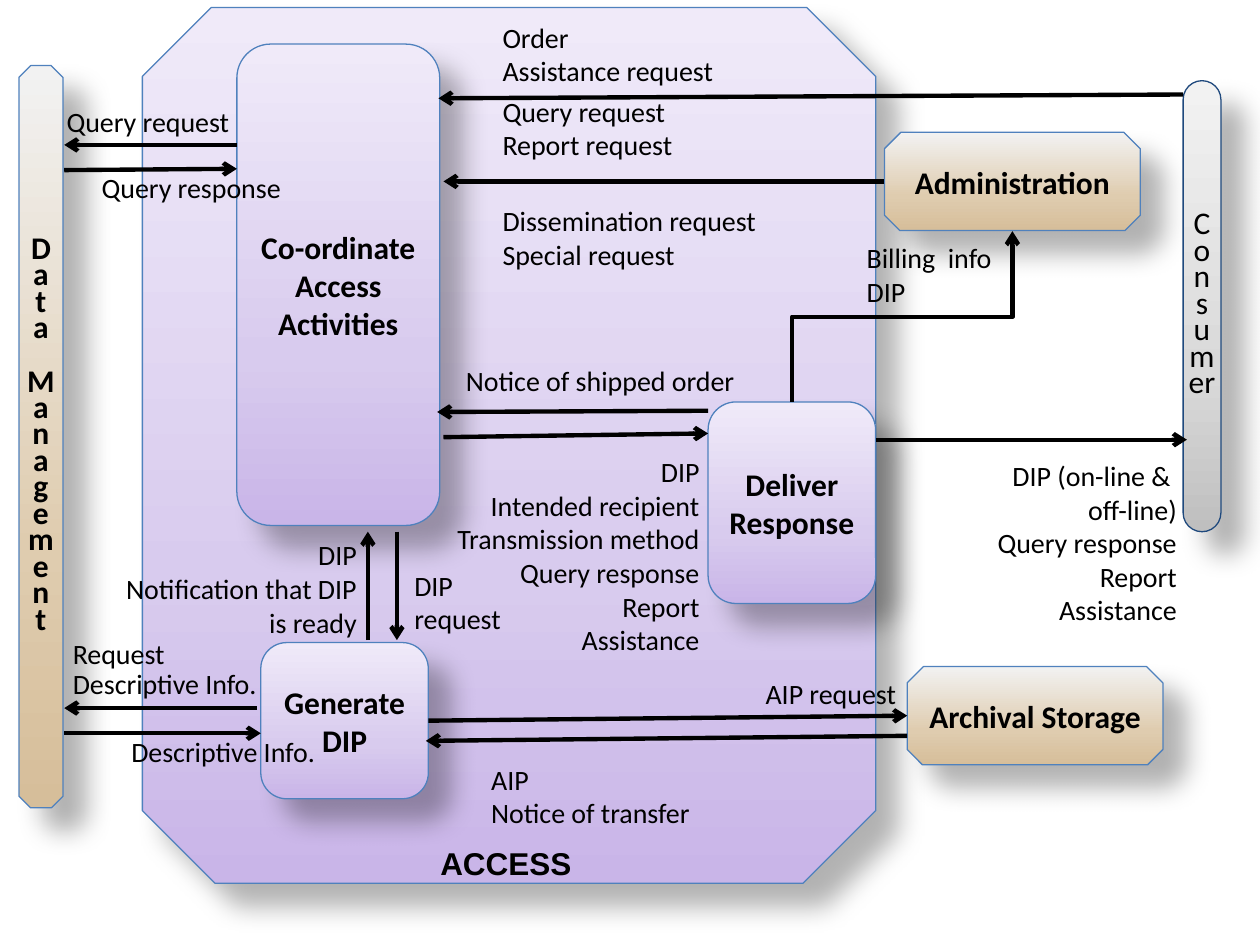
from lxml.etree import SubElement
from pptx import Presentation
from pptx.dml.color import RGBColor
from pptx.enum.shapes import MSO_CONNECTOR as Link, MSO_SHAPE as Shape
from pptx.enum.text import MSO_ANCHOR as Anchor, MSO_AUTO_SIZE as AutoSize, PP_ALIGN as Align
from pptx.oxml import parse_xml
from pptx.oxml.ns import nsdecls, qn
from pptx.util import Inches, Pt

BLACK, BLUE, NAVY = "000000", "4F81BD", "1F497D"
PURPLE = ("C9B5E8", "D8CBEE", "F0EAF9")
TAN = ("D6BE9A", "DFCCAF", "F2F2F2")
GREY = ("BFBFBF", "D9D9D9", "F2F2F2")
SNIP, ROUND = Shape.SNIP_2_SAME_RECTANGLE, Shape.ROUNDED_RECTANGLE
MARGINS = (0.1, 0.05, 0.1, 0.05)
FLUSH = (0, 0, 0, 0)
LOW, HIGH = (0.1, 0.05, 0.1, 0), (0.1, 0, 0.1, 0.05)

# name: (preset, adjustments, place, colours, lines of text)
ENTITIES = {
    "access": (SNIP, (0.094, 0.099), (1.13, 0.06, 5.82, 6.95), PURPLE, []),
    "coordinate": (ROUND, (), (1.88, 0.35, 1.61, 3.82), PURPLE, ["Co-ordinate Access Activities"]),
    "generate": (ROUND, (), (2.07, 5.1, 1.33, 1.24), PURPLE, ["Generate", "DIP"]),
    "deliver": (ROUND, (), (5.62, 3.19, 1.33, 1.6), PURPLE, ["Deliver Response"]),
    "administration": (SNIP, (0.167, 0.156), (7.02, 1.05, 2.03, 0.78), TAN, ["Administration"]),
    "storage": (SNIP, (0.167, 0.156), (7.2, 5.29, 2.03, 0.78), TAN, ["Archival Storage"]),
    "data": (SNIP, (0.271, 0.26), (0.15, 0.52, 0.35, 5.89), TAN, list("DataManagement")),
    "consumer": (ROUND, (0.5,), (9.39, 0.64, 0.3, 3.58), GREY, ["Consumer"]),
}

FLOWS = [
    (2.92, 5.08, 2.92, 4.22), (3.15, 4.22, 3.15, 5.08),
    (1.88, 1.15, 0.51, 1.15), (0.51, 1.35, 1.88, 1.34),
    (9.39, 0.75, 3.48, 0.78), (7.02, 1.44, 3.52, 1.44),
    (2.04, 5.62, 0.51, 5.62), (0.51, 5.82, 2.07, 5.82),
    (7.2, 5.84, 3.38, 5.88), (6.95, 3.49, 9.42, 3.49),
    (5.62, 3.26, 3.47, 3.27), (3.52, 3.47, 5.62, 3.44),
]
AIP_REQUEST = (3.4, 5.72, 7.2, 5.68)
BILLING = (6.48, 1.64, 7.84, 3.39)

# (place, alignment, margins, line spacing, lines of text)
LABELS = [
    ((3.89, 0.16, 2.26, 1.18), Align.LEFT, HIGH, 1,
     ["Order", "Assistance request", "Query request", "Report request"]),
    ((5.87, 5.32, 1.34, 0.32), Align.RIGHT, LOW, 1, ["AIP request"]),
    ((3.8, 6, 2.25, 0.59), Align.LEFT, LOW, 1, ["AIP", "Notice of transfer"]),
    ((0.48, 5.03, 2.07, 0.59), Align.LEFT, MARGINS, 0.9, ["Request", "Descriptive Info."]),
    ((0.87, 5.78, 1.73, 0.37), Align.RIGHT, MARGINS, 1, ["Descriptive Info."]),
    ((0.43, 0.78, 1.61, 0.37), Align.LEFT, MARGINS, 1, ["Query request"]),
    ((0.46, 1.35, 1.77, 0.27), Align.RIGHT, FLUSH, 1, ["Query response"]),
    ((0.75, 4.22, 2.18, 0.91), Align.RIGHT, MARGINS, 1, ["DIP", "Notification that DIP is ready"]),
    ((3.19, 4.46, 1.94, 0.64), Align.LEFT, MARGINS, 1, ["DIP", "request"]),
    ((3.89, 1.57, 2.63, 0.64), Align.LEFT, MARGINS, 1, ["Dissemination request", "Special request"]),
    ((6.78, 1.86, 2.95, 0.64), Align.LEFT, MARGINS, 1, ["Billing  info", "DIP"]),
    ((7.45, 3.64, 1.89, 1.35), Align.RIGHT, FLUSH, 1,
     ["DIP (on-line & ", "off-line)", "Query response", "Report", "Assistance"]),
    ((3.4, 3.56, 2.25, 1.72), Align.RIGHT, MARGINS, 1,
     ["DIP", "Intended recipient", "Transmission method", "Query response", "Report", "Assistance"]),
    ((3.6, 2.84, 2.46, 0.37), Align.LEFT, MARGINS, 1, ["Notice of shipped order"]),
]


def rgb(value):
    return RGBColor.from_string(value)


def inches(lengths):
    return [Inches(length) for length in lengths]


def write(frame, lines, align, size, bold=False, font="Calibri", margins=MARGINS, spacing=1, anchor=Anchor.TOP):
    frame.word_wrap, frame.auto_size, frame.vertical_anchor = True, AutoSize.NONE, anchor
    frame.margin_left, frame.margin_top, frame.margin_right, frame.margin_bottom = inches(margins)
    frame.text = "\n".join(lines)
    for paragraph in frame.paragraphs:
        paragraph.alignment, paragraph.line_spacing = align, spacing
        paragraph.font.name, paragraph.font.size = font, Pt(size)
        paragraph.font.bold, paragraph.font.color.rgb = bold, rgb(BLACK)


def add_entity(slide, preset, adjustments, place, colours, lines):
    entity = slide.shapes.add_shape(preset, *inches(place))
    for index, value in enumerate(adjustments):
        entity.adjustments[index] = value
    vertical, is_consumer = len(lines) > 2, colours is GREY
    entity.line.color.rgb, entity.line.width = rgb(NAVY if is_consumer else BLUE), Pt(0.75)
    stops = "".join(f'<a:gs pos="{pos}"><a:srgbClr val="{colour}"/></a:gs>'
                    for pos, colour in zip((0, 35000, 100000), colours))
    properties = entity._element.spPr
    properties.find(qn("a:ln")).addprevious(parse_xml(
        f'<a:gradFill {nsdecls("a")} rotWithShape="1"><a:gsLst>{stops}</a:gsLst>'
        '<a:lin ang="16200000" scaled="1"/></a:gradFill>'))
    properties.append(parse_xml(
        f'<a:effectLst {nsdecls("a")}><a:outerShdw blurRad="{Pt(15)}" dist="{Pt(18)}" dir="2700000" '
        'algn="tl" rotWithShape="0"><a:srgbClr val="000000"><a:alpha val="30000"/></a:srgbClr>'
        '</a:outerShdw></a:effectLst>'))
    if lines:
        write(entity.text_frame, lines, Align.CENTER, 18, not is_consumer, anchor=Anchor.MIDDLE,
              margins=(0, 0.05, 0, 0.05) if is_consumer else MARGINS,
              spacing=0.7 if vertical or is_consumer else 1)
    if vertical:
        entity.text_frame.word_wrap = False
        entity.text_frame.paragraphs[len("Data")].space_before = Pt(15.4)
    return entity


def add_flow(slide, ends, kind=Link.STRAIGHT, arrow="a:tailEnd"):
    flow = slide.shapes.add_connector(kind, *inches(ends))
    flow.line.color.rgb, flow.line.width = rgb(BLACK), Pt(2.5)
    SubElement(flow.line._get_or_add_ln(), qn(arrow), type="arrow")
    SubElement(flow._element.spPr, qn("a:effectLst"))
    return flow


def main():
    """Build the slide of the Access functions and the data flows around them."""
    deck = Presentation()
    deck.slide_width, deck.slide_height = Inches(10), Inches(7.5)
    slide = deck.slides.add_slide(deck.slide_layouts[5])
    entities = {name: add_entity(slide, *entity) for name, entity in ENTITIES.items()}
    for ends in FLOWS:
        add_flow(slide, ends)
    add_flow(slide, AIP_REQUEST).begin_connect(entities["generate"], 3)
    billing = add_flow(slide, BILLING, Link.ELBOW, "a:headEnd")
    billing._element.spPr.find(qn("a:xfrm")).set("rot", str(90 * 60000))
    for place, align, margins, spacing, lines in LABELS:
        label = slide.shapes.add_textbox(*inches(place))
        write(label.text_frame, lines, align, 16, margins=margins, spacing=spacing)
        if lines[0] == "Order":
            label.text_frame.paragraphs[2].space_before = Pt(4)
    title = slide.shapes.title
    title.left, title.top, title.width, title.height = inches((1.69, 6.65, 4.65, 0.4))
    write(title.text_frame, ["ACCESS"], Align.CENTER, 18, True, "Arial")
    slide.shapes._spTree.append(title._element)
    deck.save("out.pptx")


if __name__ == "__main__":
    main()
